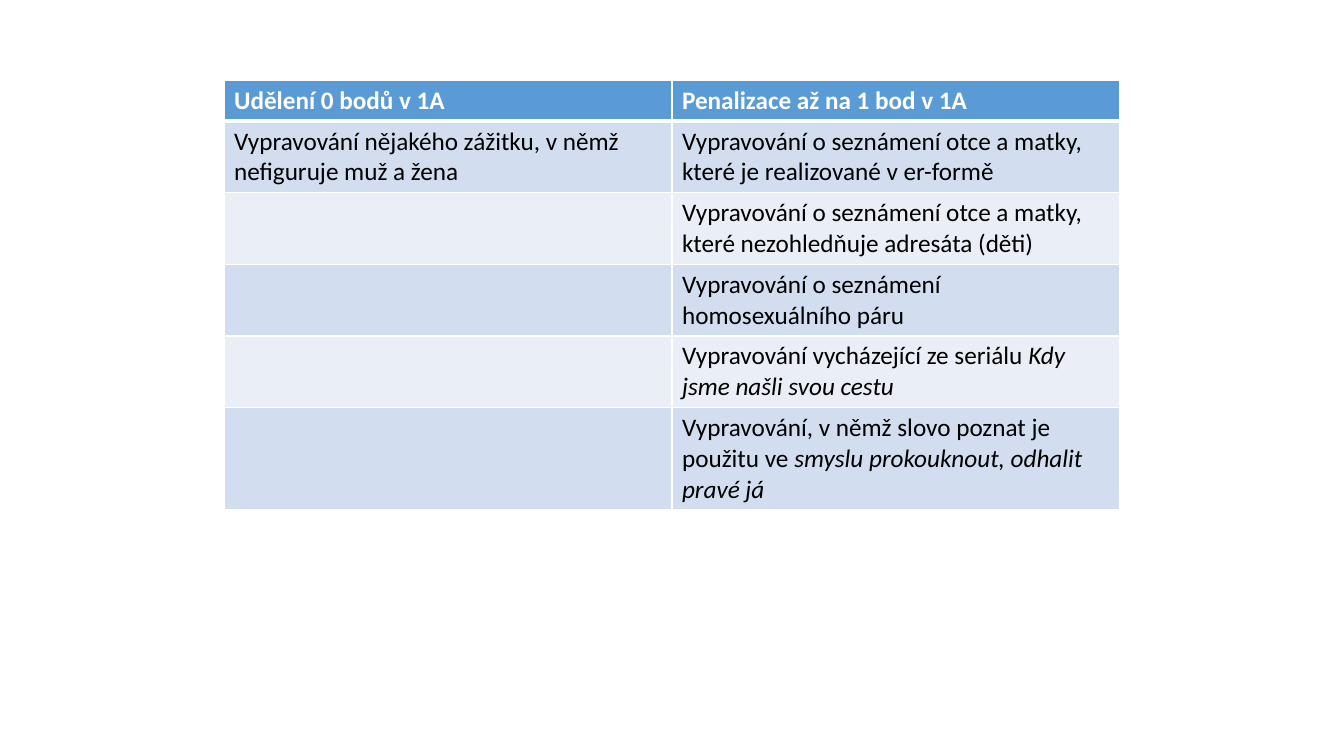
from lxml.etree import SubElement
from pptx import Presentation
from pptx.dml.color import RGBColor
from pptx.oxml.ns import qn
from pptx.util import Pt

# Content: each cell is plain text followed by italic text
HEADERS = ["Udělení 0 bodů v 1A", "Penalizace až na 1 bod v 1A"]
ROWS = [
    [("Vypravování nějakého zážitku, v němž nefiguruje muž a žena", ""),
     ("Vypravování o seznámení otce a matky, které je realizované v er-formě", "")],
    [("", ""), ("Vypravování o seznámení otce a matky, které nezohledňuje adresáta (děti)", "")],
    [("", ""), ("Vypravování o seznámení homosexuálního páru", "")],
    [("", ""), ("Vypravování vycházející ze seriálu ", "Kdy jsme našli svou cestu")],
    [("", ""), ("Vypravování, v němž slovo poznat je použitu ve ",
                "smyslu prokouknout, odhalit pravé já")],
]
COLORS = {"header": "5B9BD5", "odd": "D2DEEF", "even": "EAEFF7",
          "white": "FFFFFF", "text": "000000"}
FONT, SIZE = "Calibri", Pt(18)

# Layout in px
PX = 9071
SLIDE_W, SLIDE_H = 1344, 756
LEFT, TOP, COL_W = 224, 80, 448
ROW_HEIGHTS = [41, 71, 71, 71, 71, 102]


def set_borders(cell, bottom):
    tc_pr = cell._tc.get_or_add_tcPr()
    for side, width in (("L", 1), ("R", 1), ("T", 1), ("B", bottom)):
        ln = SubElement(tc_pr, qn(f"a:ln{side}"), w=str(Pt(width)))
        fill = SubElement(ln, qn("a:solidFill"))
        SubElement(fill, qn("a:srgbClr"), val=COLORS["white"])


def fill_cell(cell, parts, fill, color, bold=False, bottom=1):
    set_borders(cell, bottom)
    cell.fill.solid()
    cell.fill.fore_color.rgb = RGBColor.from_string(COLORS[fill])
    p = cell.text_frame.paragraphs[0]
    p.font.size = SIZE
    for text, italic in zip(parts, (False, True)):
        if text:
            r = p.add_run()
            r.text = text
            r.font.name, r.font.size = FONT, SIZE
            r.font.bold, r.font.italic = bold, italic
            r.font.color.rgb = RGBColor.from_string(COLORS[color])


prs = Presentation()
prs.slide_width, prs.slide_height = SLIDE_W * PX, SLIDE_H * PX
s = prs.slides.add_slide(prs.slide_layouts[6])

# Table grid
table = s.shapes.add_table(len(ROWS) + 1, len(HEADERS), LEFT * PX, TOP * PX,
                           COL_W * len(HEADERS) * PX, sum(ROW_HEIGHTS) * PX).table
for column in table.columns:
    column.width = COL_W * PX
for row, height in zip(table.rows, ROW_HEIGHTS):
    row.height = height * PX

# Header row
for j, header in enumerate(HEADERS):
    fill_cell(table.cell(0, j), (header, ""), "header", "white", bold=True, bottom=3)

# Banded body rows
for i, cells in enumerate(ROWS, start=1):
    for j, parts in enumerate(cells):
        fill_cell(table.cell(i, j), parts, "odd" if i % 2 else "even", "text")

prs.save("out.pptx")
